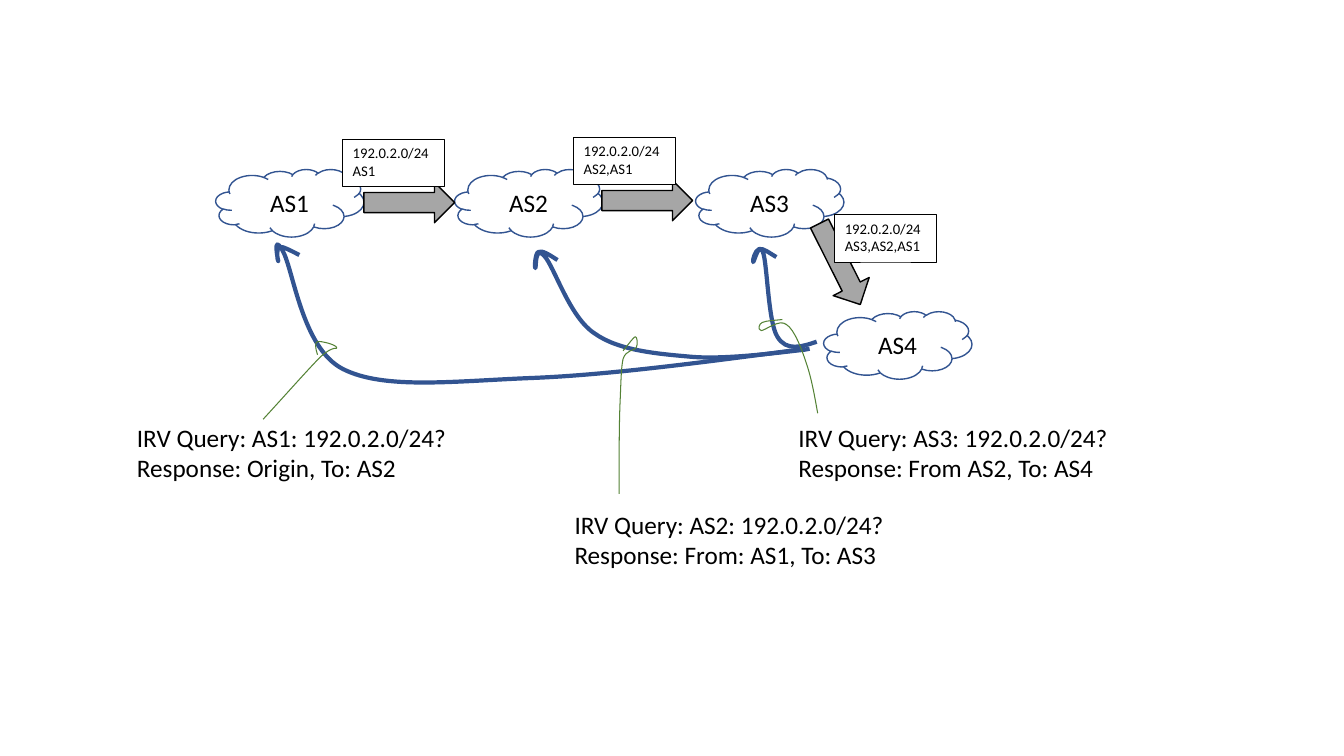
from lxml import etree
from pptx import Presentation
from pptx import util as u
from pptx.dml.color import RGBColor
from pptx.enum import shapes, text
from pptx.oxml.ns import qn

BLUE, GREEN, GRAY, BLACK, WHITE = "325491", "548235", "A6A6A6", "000000", "FFFFFF"
FONT = "Calibri"
CLOUD_W, CLOUD_H = 1.47, 0.67
ARROW_W, ARROW_H = 0.9, 0.4
ROUTE_W, ROUTE_H = 1.01, 0.47
NOTE_W, NOTE_H = 3.36, 0.71
PREFIX = "192.0.2.0/24"
STEPS = 40

clouds = [("AS1", 2.14, 1.68), ("AS3", 6.9, 1.68), ("AS2", 4.51, 1.68), ("AS4", 8.17, 3.09)]
arrows = [(3.61, 1.81, 0), (5.97, 1.79, 0), (7.88, 2.42, 63.3)]
routes = [("AS1", 3.4, 1.38), ("AS2,AS1", 5.69, 1.36), ("AS3,AS2,AS1", 8.28, 2.13)]
notes = [
    ("AS3", "From AS2, To: AS4", 7.82, 4.14),
    ("AS2", "From: AS1, To: AS3", 5.6, 5),
    ("AS1", "Origin, To: AS2", 1.26, 4.14),
]
queries = [
    [(8.1, 3.39), (7.95, 3.44), (7.8, 3.49), (7.71, 3.34), (7.62, 3.2), (7.61, 2.63),
     (7.57, 2.51), (7.53, 2.38), (7.48, 2.6), (7.47, 2.6), (7.46, 2.59), (7.49, 2.48),
     (7.53, 2.47), (7.57, 2.46), (7.63, 2.51), (7.7, 2.55)],
    [(8.03, 3.46), (7.98, 3.47), (7.78, 3.49), (7.21, 3.57),
     (6.86, 3.54), (6.52, 3.51), (6.14, 3.48), (5.9, 3.31), (5.65, 3.15), (5.5, 2.65),
     (5.4, 2.54), (5.3, 2.43), (5.32, 2.66), (5.31, 2.66), (5.3, 2.65), (5.31, 2.51),
     (5.34, 2.5), (5.38, 2.48), (5.45, 2.53), (5.53, 2.58)],
    [(7.99, 3.46), (7.01, 3.59), (6.04, 3.72), (5.28, 3.75), (4.51, 3.78), (3.81, 3.87),
     (3.4, 3.66), (2.99, 3.45), (2.91, 2.66), (2.8, 2.48), (2.7, 2.31), (2.76, 2.59),
     (2.76, 2.59), (2.75, 2.58), (2.74, 2.46), (2.77, 2.45), (2.8, 2.44), (2.89, 2.49),
     (2.97, 2.53)],
]
leaders = [
    [(2.61, 4.16), (2.84, 3.91), (3.06, 3.66), (3.18, 3.54), (3.31, 3.42), (3.35, 3.47),
     (3.34, 3.45), (3.34, 3.42), (3.18, 3.38), (3.15, 3.39), (3.12, 3.4), (3.13, 3.46),
     (3.15, 3.52)],
    [(6.14, 4.9), (6.14, 4.55), (6.14, 4.21), (6.15, 3.99), (6.16, 3.77), (6.16, 3.65),
     (6.18, 3.56), (6.21, 3.47), (6.29, 3.48), (6.31, 3.45), (6.33, 3.41), (6.32, 3.34),
     (6.3, 3.34), (6.28, 3.35), (6.23, 3.42), (6.18, 3.48)],
    [(8.11, 4.1), (8.08, 3.93), (8.05, 3.76), (8, 3.61), (7.95, 3.46), (7.88, 3.27),
     (7.8, 3.22), (7.73, 3.16), (7.59, 3.28), (7.55, 3.28), (7.51, 3.27), (7.53, 3.21),
     (7.56, 3.2), (7.6, 3.18), (7.68, 3.18), (7.76, 3.17)],
]

prs = Presentation()
prs.slide_width, prs.slide_height = u.Inches(13.33), u.Inches(7.5)
s = prs.slides.add_slide(prs.slide_layouts[6])


def rgb(color):
    return RGBColor.from_string(color)


def style(sp, line, width, fill=None):
    sp.shadow.inherit = False
    if fill:
        sp.fill.solid()
        sp.fill.fore_color.rgb = rgb(fill)
    else:
        sp.fill.background()
    sp.line.color.rgb = rgb(line)
    sp.line.width = u.Pt(width)


def shape(parent, kind, x, y, w, h, **fmt):
    sp = parent.shapes.add_shape(kind, *map(u.Inches, (x, y, w, h)))
    style(sp, **fmt)
    return sp


def write(sp, lines, size=18):
    tf = sp.text_frame
    tf.word_wrap = False
    tf.auto_size = text.MSO_AUTO_SIZE.SHAPE_TO_FIT_TEXT
    tf.vertical_anchor = text.MSO_ANCHOR.TOP
    for i, line in enumerate(lines):
        p = tf.add_paragraph() if i else tf.paragraphs[0]
        p.alignment = text.PP_ALIGN.LEFT
        r = p.add_run()
        r.text = line
        r.font.size, r.font.name = u.Pt(size), FONT
        r.font.color.rgb = rgb(BLACK)


def textbox(parent, lines, x, y, w, h):
    write(parent.shapes.add_textbox(*map(u.Inches, (x, y, w, h))), lines)


def bezier(points, t):
    weights = ((1 - t) ** 3, 3 * t * (1 - t) ** 2, 3 * t * t * (1 - t), t ** 3)
    return [sum(k * pt[axis] for k, pt in zip(weights, points)) for axis in (0, 1)]


def curve(points, **fmt):
    lead = (len(points) - 1) % 3
    bends = [points[i:i + 4] for i in range(lead, len(points) - 1, 3)]
    outline = [points[0]] + [bezier(b, n / STEPS) for b in bends for n in range(STEPS + 1)]
    xs, ys = zip(*outline)
    left, top = u.Inches(min(xs)), u.Inches(min(ys))
    width, height = u.Inches(max(xs)) - left, u.Inches(max(ys)) - top

    fb = s.shapes.build_freeform(left, top)
    fb.add_line_segments([(left + width, top + height)], close=False)
    sp = fb.convert_to_shape()
    style(sp, **fmt)
    route = sp._element.find(".//" + qn("a:path"))
    for child in list(route):
        route.remove(child)

    def command(tag, pts):
        node = etree.SubElement(route, qn(tag))
        for x, y in pts:
            etree.SubElement(node, qn("a:pt"), x=str(u.Inches(x) - left),
                             y=str(u.Inches(y) - top))

    command("a:moveTo", points[:1])
    if lead:
        command("a:lnTo", points[1:2])
    for bend in bends:
        command("a:cubicBezTo", bend[1:])


for name, x, y in clouds:
    group = s.shapes.add_group_shape()
    shape(group, shapes.MSO_SHAPE.CLOUD, x, y, CLOUD_W, CLOUD_H, line=BLUE, width=1)
    textbox(group, [name], x + 0.44, y + 0.13, 0.59, 0.4)

for x, y, angle in arrows:
    sp = shape(s, shapes.MSO_SHAPE.RIGHT_ARROW, x, y, ARROW_W, ARROW_H,
               line=BLACK, width=1, fill=GRAY)
    sp.rotation = angle

for points in queries:
    curve(points, line=BLUE, width=3)

for hops, x, y in routes:
    sp = shape(s, shapes.MSO_SHAPE.RECTANGLE, x, y, ROUTE_W, ROUTE_H,
               line=BLACK, width=0.5, fill=WHITE)
    write(sp, [PREFIX, hops], size=10.5)

for name, response, x, y in notes:
    textbox(s, [f"IRV Query: {name}: {PREFIX}?", f"Response: {response}"],
            x, y, NOTE_W, NOTE_H)

for points in leaders:
    curve(points, line=GREEN, width=0.75)

prs.save("out.pptx")
